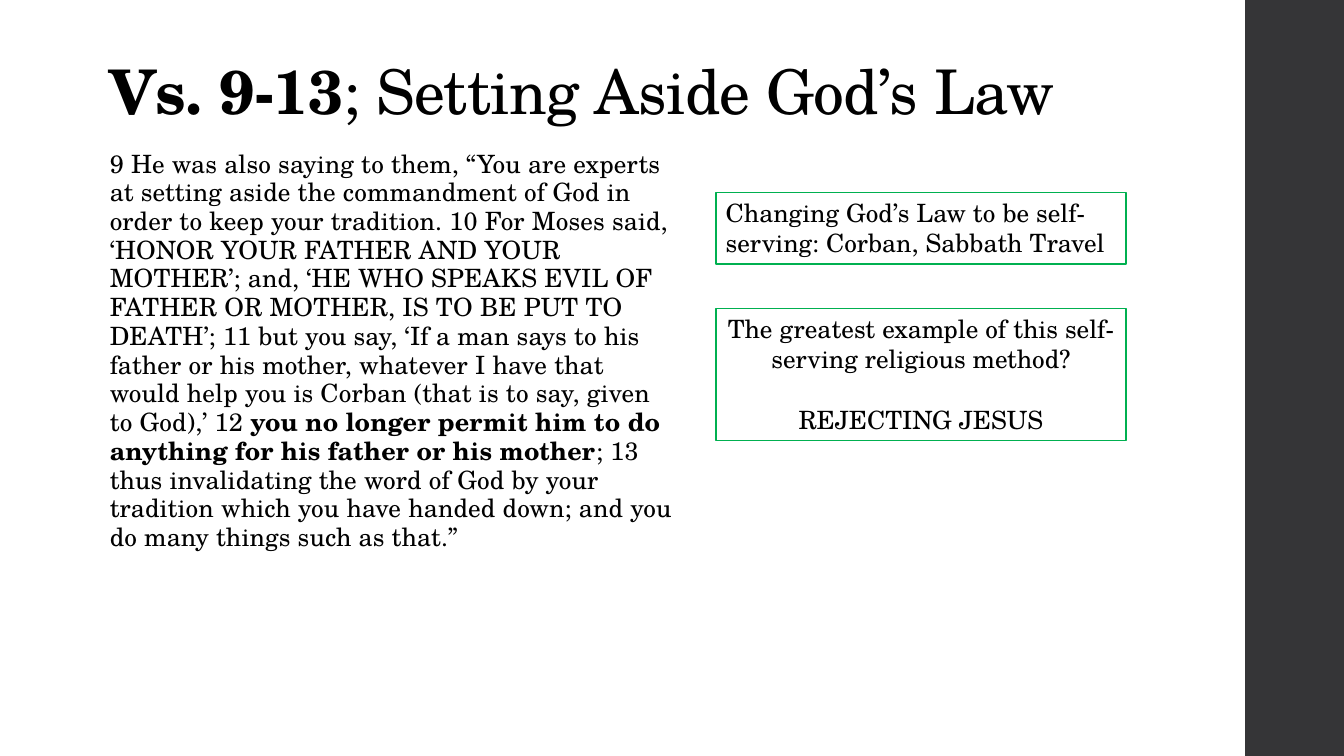
"""Builds the slide on verses 9-13, setting aside God's law."""
import pptx
import pptx.util
import pptx.dml.color
import pptx.enum.shapes
import pptx.enum.text

Inches = pptx.util.Inches
Pt = pptx.util.Pt
ALIGN = pptx.enum.text.PP_ALIGN
ANCHOR = pptx.enum.text.MSO_ANCHOR

FONT = "TeX Gyre Schola"
COLORS = {"text": "000000", "side_band": "353537", "box_line": "00B050"}

TITLE = [[("Vs. 9-13", True), ("; Setting Aside God’s Law", False)]]
PASSAGE = [[
    ("9 He was also saying to them, “You are experts at setting aside the "
     "commandment of God in order to keep your tradition. 10 For Moses said, "
     "‘HONOR YOUR FATHER AND YOUR MOTHER’; and, ‘HE WHO SPEAKS EVIL OF FATHER "
     "OR MOTHER, IS TO BE PUT TO DEATH’; 11 but you say, ‘If a man says to his "
     "father or his mother, whatever I have that would help you is Corban "
     "(that is to say, given to God),’ 12 ", False),
    ("you no longer permit him to do anything for his father or his mother", True),
    ("; 13 thus invalidating the word of God by your tradition which you have "
     "handed down; and you do many things such as that.”", False),
]]
CHANGED_LAW = [[("Changing God’s Law to be self-serving: Corban, Sabbath Travel", False)]]
REJECTION = [
    [("The greatest example of this self-serving religious method?", False)],
    [("REJECTING JESUS", False)],
]

LEFT = 0.99
BOX_LEFT, BOX_WIDTH = 7.1, 4.07
BOXES = [
    (CHANGED_LAW, 1.91, 0.71, ALIGN.LEFT),
    (REJECTION, 3.06, 1.31, ALIGN.CENTER),
]


def color(name):
    return pptx.dml.color.RGBColor.from_string(COLORS[name])


def write_text(shape, paragraphs, size=18, align=ALIGN.LEFT, anchor=ANCHOR.TOP,
               line_spacing=1.0, gap=0, tracking=0):
    frame = shape.text_frame
    frame.word_wrap = True
    frame.vertical_anchor = anchor
    for index, runs in enumerate(paragraphs):
        paragraph = frame.add_paragraph() if index else frame.paragraphs[0]
        paragraph.alignment = align
        paragraph.line_spacing = line_spacing
        if index:
            paragraph.space_before = Pt(gap)
        for text, bold in runs:
            run = paragraph.add_run()
            run.text = text
            run.font.name = FONT
            run.font.size = Pt(size)
            run.font.bold = bold
            run.font.color.rgb = color("text")
            if tracking:
                run.font._element.set("spc", str(round(tracking * 100)))


def add_rectangle(slide, left, top, width, height, fill=None, line=None):
    shape = slide.shapes.add_shape(
        pptx.enum.shapes.MSO_SHAPE.RECTANGLE,
        Inches(left), Inches(top), Inches(width), Inches(height))
    shape.shadow.inherit = False
    if fill:
        shape.fill.solid()
        shape.fill.fore_color.rgb = color(fill)
    else:
        shape.fill.background()
    if line:
        shape.line.color.rgb = color(line)
        shape.line.width = Pt(1)
    else:
        shape.line.fill.background()
    return shape


def main():
    presentation = pptx.Presentation()
    presentation.slide_width = Inches(13.33)
    presentation.slide_height = Inches(7.5)
    slide = presentation.slides.add_slide(presentation.slide_layouts[6])

    add_rectangle(slide, 12.35, 0, 0.98, 7.5, fill="side_band")

    title = slide.shapes.add_textbox(Inches(LEFT), Inches(0.31), Inches(10.6), Inches(1.01))
    write_text(title, TITLE, size=44, anchor=ANCHOR.BOTTOM, line_spacing=0.9, tracking=-0.5)

    passage = slide.shapes.add_textbox(Inches(LEFT), Inches(1.44), Inches(5.79), Inches(5.57))
    write_text(passage, PASSAGE, line_spacing=0.95, tracking=0.1)

    for paragraphs, top, height, align in BOXES:
        box = add_rectangle(slide, BOX_LEFT, top, BOX_WIDTH, height, line="box_line")
        write_text(box, paragraphs, align=align, gap=21.5)

    presentation.save("out.pptx")


if __name__ == "__main__":
    main()
